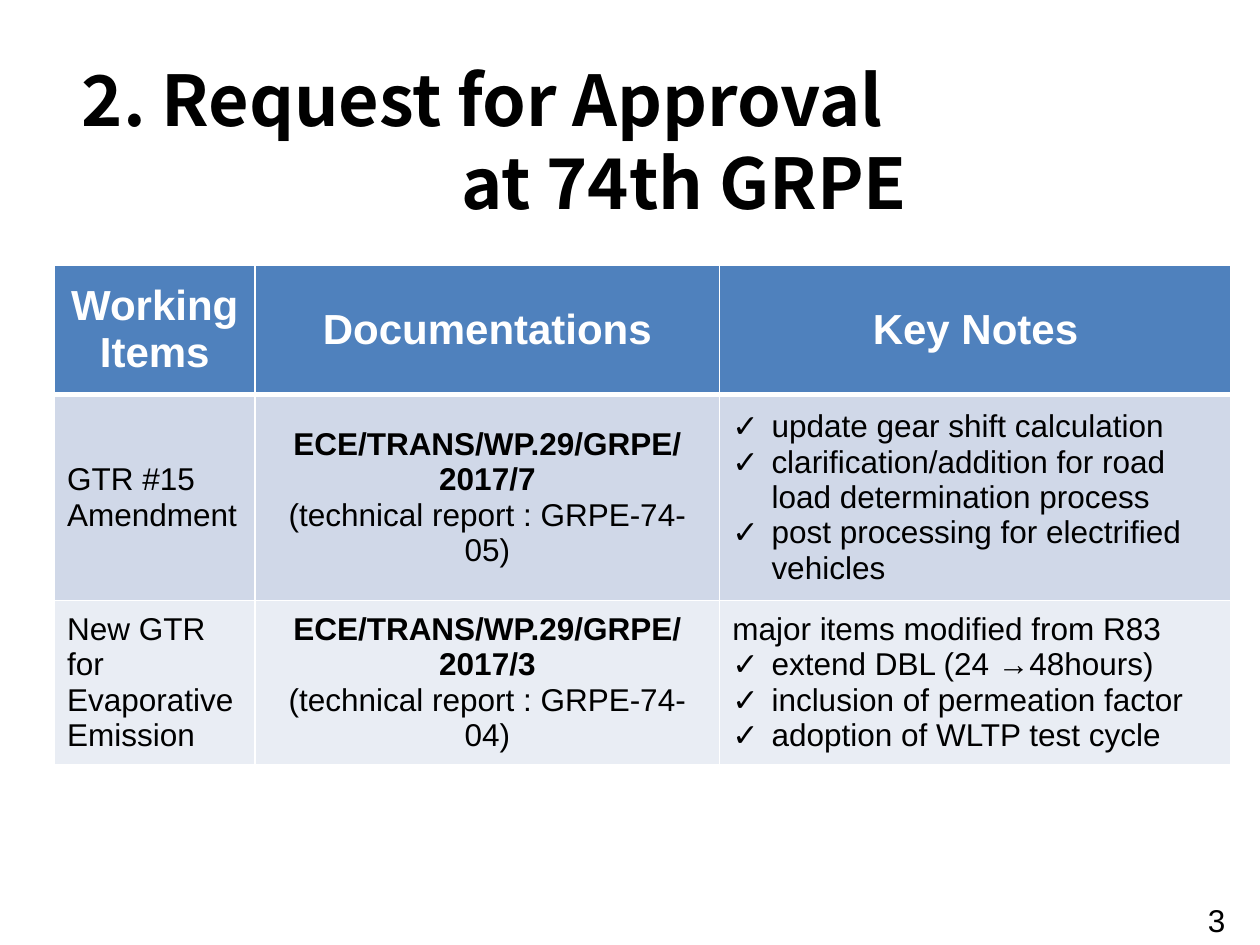
from dataclasses import dataclass

from lxml import etree
from pptx import Presentation
from pptx.dml.color import RGBColor
from pptx.enum.text import MSO_ANCHOR, PP_ALIGN
from pptx.oxml.ns import qn
from pptx.util import Cm, Pt

LEFT, CENTER = PP_ALIGN.LEFT, PP_ALIGN.CENTER
MIDDLE = MSO_ANCHOR.MIDDLE


@dataclass(frozen=True)
class Theme:
    heading_font: str = "Noto Sans CJK JP"
    body_font: str = "Arial"
    text: str = "000000"
    header_text: str = "FFFFFF"
    header_fill: str = "4F81BD"
    band_fills: tuple = ("D0D8E8", "E9EDF4")
    border: str = "FFFFFF"
    title_size: int = 40
    title_leading: int = 48
    header_size: int = 24
    body_size: int = 18
    thin: int = 1
    thick: int = 3


@dataclass(frozen=True)
class Line:
    text: str
    bold: bool = False
    align: PP_ALIGN = LEFT
    check: bool = False


class SlideBuilder:
    def __init__(self, slide, theme):
        self.slide = slide
        self.theme = theme

    def style(self, paragraph, size, bold=False, color=None, face=None):
        font = paragraph.font
        font.name = face or self.theme.body_font
        font.size = Pt(size)
        font.bold = bold
        font.color.rgb = RGBColor.from_string(color or self.theme.text)

    def paragraphs(self, frame, count):
        return [frame.paragraphs[0]] + [frame.add_paragraph() for _ in range(count - 1)]

    def text_box(self, left, top, width, height):
        frame = self.slide.shapes.add_textbox(Cm(left), Cm(top), Cm(width), Cm(height)).text_frame
        frame.word_wrap = True
        return frame

    def title(self, lines, left, top, width, height):
        """lines holds (text, indent in cm) pairs."""
        frame = self.text_box(left, top, width, height)
        frame.margin_top, frame.margin_bottom = Cm(0.24), 0
        for paragraph, (text, indent) in zip(self.paragraphs(frame, len(lines)), lines):
            paragraph.text = text
            paragraph.line_spacing = Pt(self.theme.title_leading)
            paragraph._p.get_or_add_pPr().set("marL", str(Cm(indent)))
            self.style(paragraph, self.theme.title_size, True, face=self.theme.heading_font)

    def page_number(self, number, left, top, width, height):
        paragraph = self.text_box(left, top, width, height).paragraphs[0]
        paragraph.text = number
        self.style(paragraph, self.theme.body_size)

    def check_mark(self, paragraph, hang=Cm(0.79)):
        properties = paragraph._p.get_or_add_pPr()
        properties.set("marL", str(hang))
        properties.set("indent", str(-hang))
        etree.SubElement(properties, qn("a:buFont"), typeface=self.theme.body_font)
        etree.SubElement(properties, qn("a:buChar"), char="✓")

    def borders(self, cell, top, bottom):
        properties = cell._tc.get_or_add_tcPr()
        thin = self.theme.thin
        for side, width in (("L", thin), ("R", thin), ("T", top), ("B", bottom)):
            line = etree.SubElement(properties, qn(f"a:ln{side}"), w=str(Pt(width)))
            fill = etree.SubElement(line, qn("a:solidFill"))
            etree.SubElement(fill, qn("a:srgbClr"), val=self.theme.border)

    def cell(self, cell, lines, row):
        theme = self.theme
        header = row == 0
        self.borders(cell, theme.thick if row == 1 else theme.thin,
                     theme.thick if header else theme.thin)
        cell.fill.solid()
        fill = theme.header_fill if header else theme.band_fills[(row - 1) % 2]
        cell.fill.fore_color.rgb = RGBColor.from_string(fill)
        cell.vertical_anchor = MIDDLE
        for paragraph, line in zip(self.paragraphs(cell.text_frame, len(lines)), lines):
            paragraph.text = line.text
            paragraph.alignment = line.align
            if line.check:
                self.check_mark(paragraph)
            self.style(paragraph, theme.header_size if header else theme.body_size,
                       line.bold, theme.header_text if header else theme.text)

    def table(self, rows, left, top, widths, heights):
        table = self.slide.shapes.add_table(
            len(rows), len(widths), Cm(left), Cm(top), Cm(sum(widths)), Cm(sum(heights))).table
        for column, width in zip(table.columns, widths):
            column.width = Cm(width)
        for index, (row, height) in enumerate(zip(rows, heights)):
            table.rows[index].height = Cm(height)
            for position, lines in enumerate(row):
                self.cell(table.cell(index, position), lines, index)


def plain(*texts):
    return [Line(text) for text in texts]


def heading(*texts):
    return [Line(text, bold=True, align=CENTER) for text in texts]


def document(symbol, report):
    return [Line(symbol, bold=True, align=CENTER),
            Line(f"(technical report : {report})", align=CENTER)]


def checks(*texts):
    return [Line(text, check=True) for text in texts]


def main():
    presentation = Presentation()
    presentation.slide_width, presentation.slide_height = Cm(25.4), Cm(19.05)
    slide = presentation.slides.add_slide(presentation.slide_layouts[6])
    builder = SlideBuilder(slide, Theme())

    # Page number and title
    builder.page_number("3", 24.1, 18.03, 1.3, 1.02)
    builder.title([("2. Request for Approval", 0), ("at 74th GRPE", 7.65)],
                  1.4, 0.89, 21.95, 3.68)

    # Working items submitted for approval
    working_items = [
        [heading("Working", "Items"), heading("Documentations"), heading("Key Notes")],
        [plain("GTR #15", "Amendment"),
         document("ECE/TRANS/WP.29/GRPE/2017/7", "GRPE-74-05"),
         checks("update gear shift calculation",
                "clarification/addition for road load determination process",
                "post processing for electrified vehicles")],
        [plain("New GTR for Evaporative Emission"),
         document("ECE/TRANS/WP.29/GRPE/2017/3", "GRPE-74-04"),
         plain("major items modified from R83")
         + checks("extend DBL (24 →48hours)",
                  "inclusion of permeation factor",
                  "adoption of WLTP test cycle")],
    ]
    builder.table(working_items, 1.1, 5.34, [4.04, 9.37, 10.31], [2.61, 4.16, 3.3])

    presentation.save("out.pptx")


if __name__ == "__main__":
    main()
